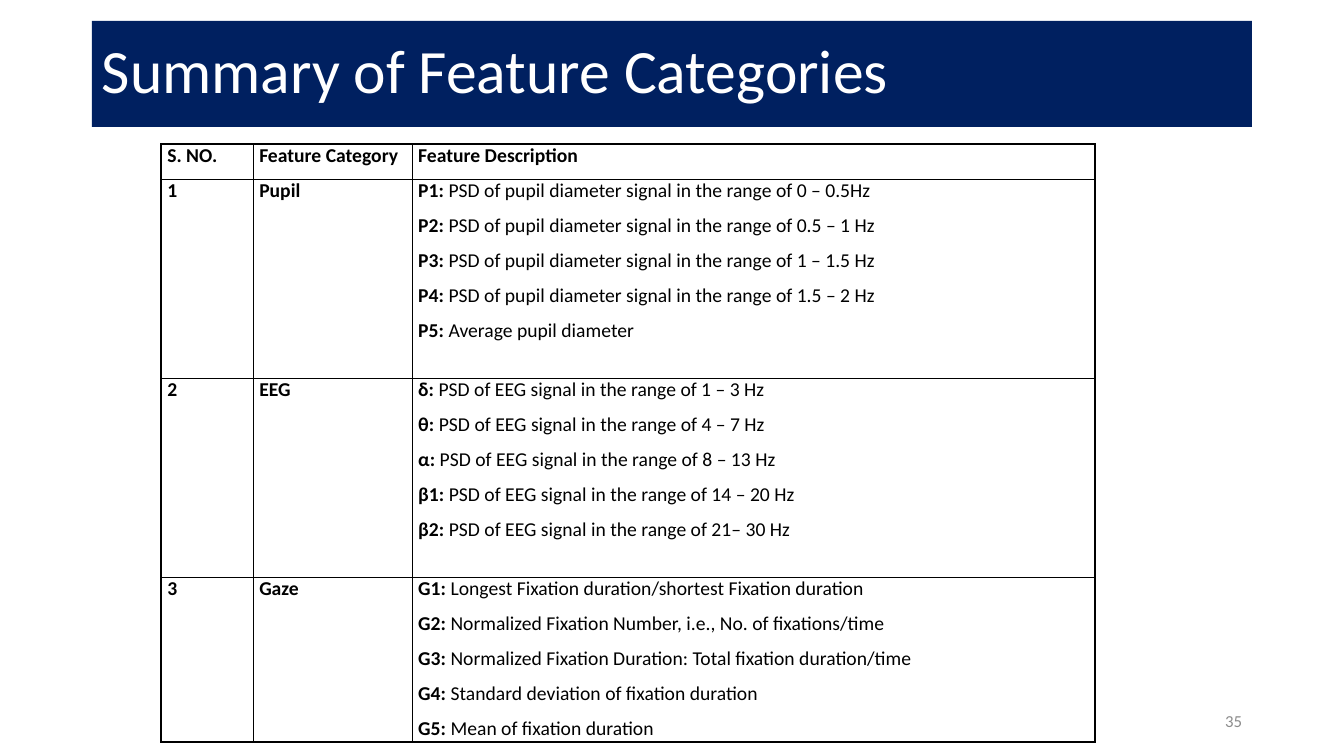
from lxml import etree
from pptx import Presentation
from pptx.dml.color import RGBColor
from pptx.enum.shapes import MSO_SHAPE
from pptx.enum.text import MSO_ANCHOR, PP_ALIGN
from pptx.oxml.ns import qn
from pptx.util import Emu, Pt

RECT = MSO_SHAPE.RECTANGLE
MIDDLE = MSO_ANCHOR.MIDDLE
LEFT, RIGHT = PP_ALIGN.LEFT, PP_ALIGN.RIGHT

NAVY = RGBColor(0x00, 0x20, 0x60)
WHITE = RGBColor(0xFF, 0xFF, 0xFF)
BLACK = RGBColor(0x00, 0x00, 0x00)
GRAY = RGBColor(0x8C, 0x8C, 0x8C)

TITLE = {"size": Pt(44), "color": WHITE}
NUMBER = {"size": Pt(12), "color": GRAY}
BODY = {"size": Pt(14), "color": BLACK, "bold": False}
STRONG = {**BODY, "bold": True}
CELL_PARAGRAPH = {"space_after": Pt(8)}
CELL = {"margin_left": Pt(4.5), "margin_right": Pt(4.5), "margin_top": 0, "margin_bottom": 0}

COLUMNS = [92, 159, 683]
ROWS = [35, 199, 199, 165]
HEADER = ["S. NO.", "Feature Category", "Feature Description"]
PUPIL_PSD = "PSD of pupil diameter signal in the range of "
EEG_PSD = "PSD of EEG signal in the range of "
CATEGORIES = [
    ("Pupil", [
        ("P1", PUPIL_PSD + "0 – 0.5Hz"),
        ("P2", PUPIL_PSD + "0.5 – 1 Hz"),
        ("P3", PUPIL_PSD + "1 – 1.5 Hz"),
        ("P4", PUPIL_PSD + "1.5 – 2 Hz"),
        ("P5", "Average pupil diameter"),
    ]),
    ("EEG", [
        ("δ", EEG_PSD + "1 – 3 Hz"),
        ("θ", EEG_PSD + "4 – 7 Hz"),
        ("α", EEG_PSD + "8 – 13 Hz"),
        ("β1", EEG_PSD + "14 – 20 Hz"),
        ("β2", EEG_PSD + "21– 30 Hz"),
    ]),
    ("Gaze", [
        ("G1", "Longest Fixation duration/shortest Fixation duration"),
        ("G2", "Normalized Fixation Number, i.e., No. of fixations/time"),
        ("G3", "Normalized Fixation Duration: Total fixation duration/time"),
        ("G4", "Standard deviation of fixation duration"),
        ("G5", "Mean of fixation duration"),
    ]),
]


def px(n):
    return Emu(round(n * 914400 / 100.8))


def set_all(target, values):
    for name, value in values.items():
        setattr(target, name, value)


def add_run(p, text, fmt):
    r = p.add_run()
    r.text = text
    r.font.name = "Calibri"
    for name, value in fmt.items():
        if name == "color":
            r.font.color.rgb = value
        else:
            setattr(r.font, name, value)


def add_title(s, text):
    sp = s.shapes.add_shape(RECT, px(92), px(21), px(1160), px(106))
    sp.shadow.inherit = False
    sp.fill.solid()
    sp.fill.fore_color.rgb = NAVY
    sp.line.fill.background()
    tf = sp.text_frame
    set_all(tf, {"word_wrap": True, "vertical_anchor": MIDDLE})
    p = tf.paragraphs[0]
    set_all(p, {"alignment": LEFT, "line_spacing": 0.9})
    add_run(p, text, TITLE)


def add_page_number(s, text):
    tf = s.shapes.add_textbox(px(950), px(701), px(302), px(40)).text_frame
    set_all(tf, {"word_wrap": True, "vertical_anchor": MIDDLE})
    p = tf.paragraphs[0]
    p.alignment = RIGHT
    add_run(p, text, NUMBER)


def set_borders(cell, outer):
    tcPr = cell._tc.get_or_add_tcPr()
    for i, (side, is_outer) in enumerate(outer.items()):
        ln = etree.Element(qn(f"a:{side}"), w=str(Pt(1 if is_outer else 0.5)))
        fill = etree.SubElement(ln, qn("a:solidFill"))
        etree.SubElement(fill, qn("a:srgbClr"), val=str(BLACK))
        tcPr.insert(i, ln)


def fill_cell(cell, lines):
    set_all(cell, CELL)
    cell.fill.background()
    tf = cell.text_frame
    for i, (label, text) in enumerate(lines):
        p = tf.add_paragraph() if i else tf.paragraphs[0]
        set_all(p, CELL_PARAGRAPH)
        add_run(p, label, STRONG)
        if text:
            add_run(p, text, BODY)


def add_feature_table(s):
    frame = s.shapes.add_table(len(ROWS), len(COLUMNS), px(161), px(144),
                               px(sum(COLUMNS)), px(sum(ROWS)))
    table = frame.table
    set_all(table, {"first_row": False, "horz_banding": False})
    for column, width in zip(table.columns, COLUMNS):
        column.width = px(width)
    for row, height in zip(table.rows, ROWS):
        row.height = px(height)

    content = [[[(text, "")] for text in HEADER]]
    for number, (category, features) in enumerate(CATEGORIES, 1):
        lines = [(f"{label}: ", text) for label, text in features]
        content.append([[(str(number), "")], [(category, "")], lines])

    for i, row in enumerate(content):
        for j, lines in enumerate(row):
            cell = table.cell(i, j)
            fill_cell(cell, lines)
            set_borders(cell, {"lnL": j == 0, "lnR": j == len(COLUMNS) - 1,
                               "lnT": i == 0, "lnB": i == len(ROWS) - 1})


def main():
    prs = Presentation()
    prs.slide_width, prs.slide_height = px(1344), px(756)
    s = prs.slides.add_slide(prs.slide_layouts[6])
    add_title(s, "Summary of Feature Categories")
    add_feature_table(s)
    add_page_number(s, "35")
    prs.save("out.pptx")


if __name__ == "__main__":
    main()
